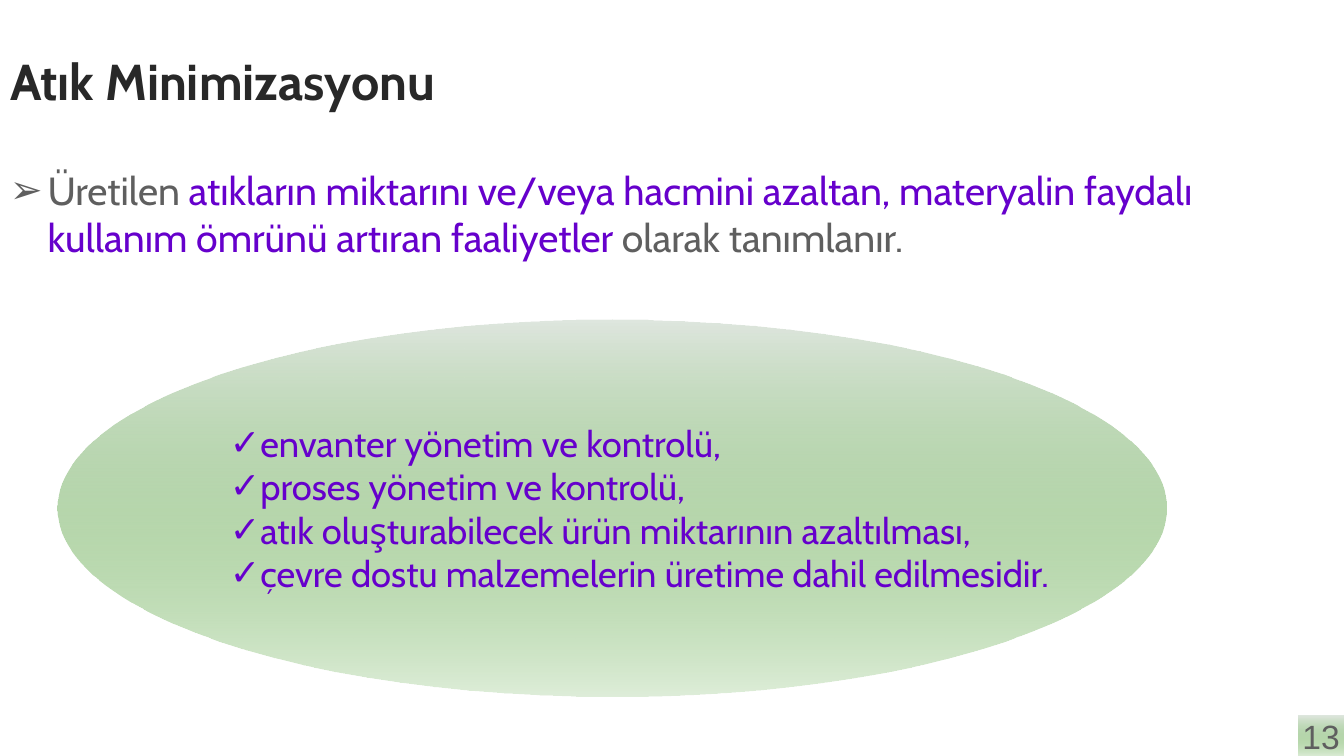
from dataclasses import dataclass

from lxml import etree
from pptx import Presentation
from pptx.dml.color import RGBColor
from pptx.enum.shapes import MSO_SHAPE
from pptx.enum.text import MSO_ANCHOR, MSO_AUTO_SIZE, PP_ALIGN
from pptx.oxml.ns import qn
from pptx.util import Cm, Pt

OVAL, RECTANGLE = MSO_SHAPE.OVAL, MSO_SHAPE.RECTANGLE
TOP, MIDDLE = MSO_ANCHOR.TOP, MSO_ANCHOR.MIDDLE
LEFT, CENTER = PP_ALIGN.LEFT, PP_ALIGN.CENTER
TITLE_ONLY = 5


@dataclass(frozen=True)
class Theme:
    heading: str = "282828"
    text: str = "5F5F5F"
    accent: str = "6600CC"
    pale: str = "DFE7DF"
    green: str = "238A00"
    green_opacity: int = 15
    font: str = "Cabin"
    number_font: str = "Arial"
    title_size: int = 36
    body_size: int = 28
    list_size: int = 26
    number_size: int = 24


THEME = Theme()


def add_bullet(para, mark, indent=0):
    properties = para._p.get_or_add_pPr()
    properties.set("marL", str(indent))
    properties.set("indent", str(-indent))
    etree.SubElement(properties, qn("a:buFont")).set("typeface", "Arial")
    etree.SubElement(properties, qn("a:buChar")).set("char", mark)


def add_span(para, text, size, color=THEME.text, font=THEME.font, bold=False):
    span = para.add_run()
    span.text = text
    span.font.name = font
    span.font.size = Pt(size)
    span.font.bold = bold
    span.font.color.rgb = RGBColor.from_string(color)


def prepare_frame(frame, anchor, wrap):
    frame.auto_size = MSO_AUTO_SIZE.NONE
    frame.vertical_anchor = anchor
    frame.word_wrap = wrap


def add_green_shape(page, kind, box):
    """Add a borderless shape that fades downwards from pale to clear green."""
    shape = page.shapes.add_shape(kind, *box)
    shape.shadow.inherit = False
    shape.line.fill.background()
    shape.fill.gradient()
    shape.fill.gradient_angle = 270
    stops = shape.fill.gradient_stops
    for stop, color, position in zip(stops, (THEME.pale, THEME.green), (0, 1)):
        stop.color.rgb = RGBColor.from_string(color)
        stop.position = position
    end_color = stops[1]._gs.find(qn("a:srgbClr"))
    alpha = etree.SubElement(end_color, qn("a:alpha"))
    alpha.set("val", str(THEME.green_opacity * 1000))
    prepare_frame(shape.text_frame, MIDDLE, False)
    return shape


def set_title(page, box, text):
    title = page.shapes.title
    title.left, title.top, title.width, title.height = box
    prepare_frame(title.text_frame, MIDDLE, True)
    para = title.text_frame.paragraphs[0]
    para.alignment = LEFT
    add_span(para, text, THEME.title_size, THEME.heading, bold=True)


def add_definition(page, box, parts):
    frame = page.shapes.add_textbox(*box).text_frame
    prepare_frame(frame, TOP, True)
    para = frame.paragraphs[0]
    add_bullet(para, "➢", Cm(0.95))
    for text, color in parts:
        add_span(para, text, THEME.body_size, color)


def add_methods(page, box, methods):
    frame = add_green_shape(page, OVAL, box).text_frame
    for index, method in enumerate(methods):
        para = frame.add_paragraph() if index else frame.paragraphs[0]
        para.alignment = LEFT
        add_bullet(para, "✓")
        add_span(para, method, THEME.list_size, THEME.accent)


def add_page_number(page, box, number):
    para = add_green_shape(page, RECTANGLE, box).text_frame.paragraphs[0]
    para.alignment = CENTER
    add_span(para, number, THEME.number_size, font=THEME.number_font)


def build_waste_page(deck):
    page = deck.slides.add_slide(deck.slide_layouts[TITLE_ONLY])
    set_title(page, (Cm(0), Cm(1.04), Cm(27.1), Cm(1.98)), "Atık Minimizasyonu")
    add_definition(page, (Cm(0), Cm(4.06), Cm(30.6), Cm(14.99)), [
        ("Üretilen ", THEME.text),
        ("atıkların miktarını ve/veya hacmini azaltan, materyalin faydalı "
         "kullanım ömrünü artıran faaliyetler", THEME.accent),
        (" olarak tanımlanır.", THEME.text),
    ])
    add_methods(page, (Cm(1.45), Cm(8.05), Cm(27.94), Cm(9.5)), [
        "envanter yönetim ve kontrolü,",
        "proses yönetim ve kontrolü,",
        "atık oluşturabilecek ürün miktarının azaltılması,",
        "çevre dostu malzemelerin üretime dahil edilmesidir.",
    ])
    width, height = Cm(1.15), Cm(1.02)
    corner = (deck.slide_width - width, deck.slide_height - height, width, height)
    add_page_number(page, corner, "13")


def main():
    deck = Presentation()
    deck.slide_width, deck.slide_height = Cm(33.87), Cm(19.05)
    build_waste_page(deck)
    deck.save("out.pptx")


if __name__ == "__main__":
    main()
